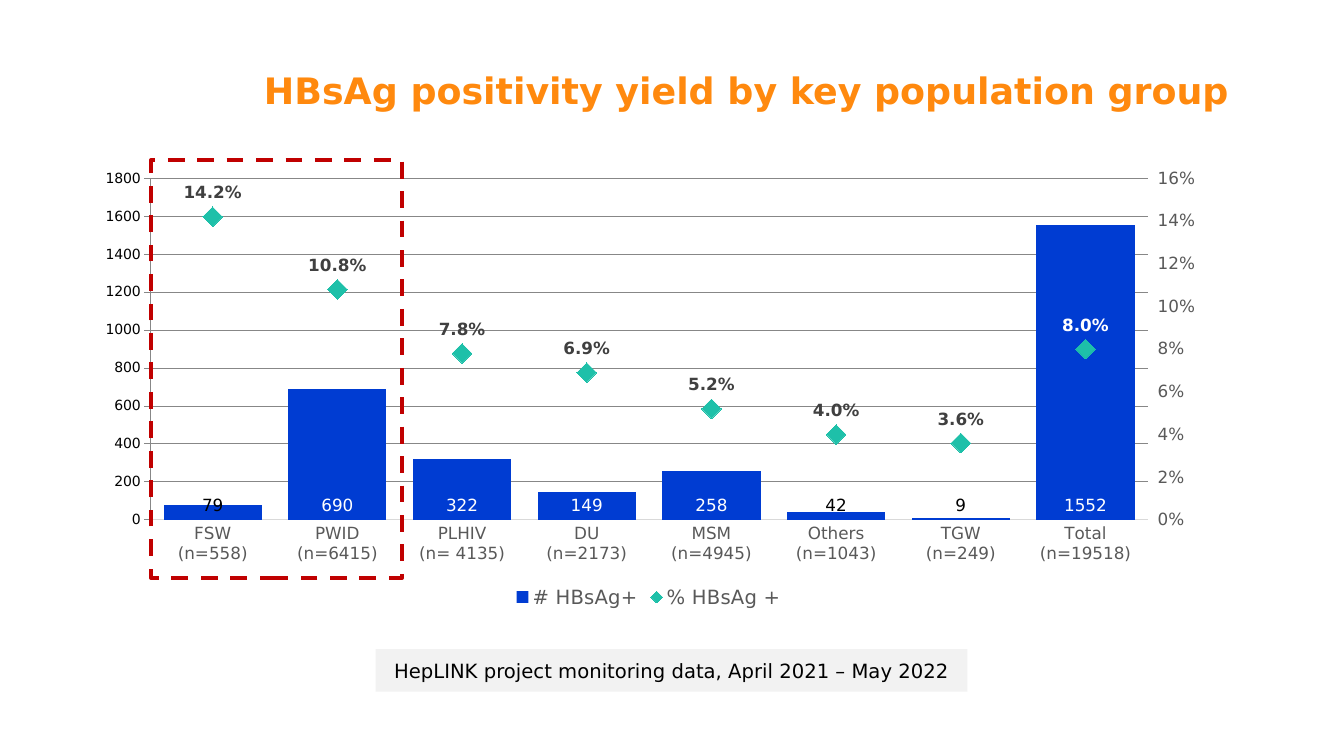
from pptx import Presentation
from pptx.chart.axis import ValueAxis
from pptx.chart.data import CategoryChartData
from pptx.dml.color import RGBColor
from pptx.enum.chart import (XL_CHART_TYPE, XL_LABEL_POSITION, XL_LEGEND_POSITION,
                             XL_MARKER_STYLE, XL_TICK_MARK)
from pptx.enum.dml import MSO_LINE
from pptx.enum.shapes import MSO_SHAPE
from pptx.enum.text import MSO_ANCHOR, PP_ALIGN
from pptx.oxml import parse_xml
from pptx.oxml.ns import qn
from pptx.util import Cm, Pt

COLUMNS = XL_CHART_TYPE.COLUMN_CLUSTERED
INSIDE_BASE, ABOVE = XL_LABEL_POSITION.INSIDE_BASE, XL_LABEL_POSITION.ABOVE
LEGEND_BOTTOM = XL_LEGEND_POSITION.BOTTOM
DIAMOND = XL_MARKER_STYLE.DIAMOND
NO_TICK, TICK_OUT = XL_TICK_MARK.NONE, XL_TICK_MARK.OUTSIDE
DASH = MSO_LINE.DASH
RECTANGLE = MSO_SHAPE.RECTANGLE
MIDDLE = MSO_ANCHOR.MIDDLE
CENTER = PP_ALIGN.CENTER

CHART_NS = 'xmlns:c="http://schemas.openxmlformats.org/drawingml/2006/chart"'
LAYOUT_XML = f"""<c:layout {CHART_NS}><c:manualLayout>
<c:layoutTarget val="inner"/><c:xMode val="edge"/><c:yMode val="edge"/>
<c:x val="0.063"/><c:y val="0.04"/><c:w val="0.875"/><c:h val="0.755"/>
</c:manualLayout></c:layout>"""
LINE_XML = f"""<c:lineChart {CHART_NS}><c:grouping val="standard"/><c:varyColors val="0"/>
<c:marker val="1"/><c:axId val="5001"/><c:axId val="5002"/></c:lineChart>"""
HIDDEN_AXIS_XML = f"""<c:catAx {CHART_NS}><c:axId val="5001"/>
<c:scaling><c:orientation val="minMax"/></c:scaling><c:delete val="1"/>
<c:axPos val="b"/><c:crossAx val="5002"/><c:crosses val="autoZero"/></c:catAx>"""
RIGHT_AXIS_XML = f"""<c:valAx {CHART_NS}><c:axId val="5002"/>
<c:scaling><c:orientation val="minMax"/></c:scaling><c:delete val="0"/>
<c:axPos val="r"/><c:tickLblPos val="nextTo"/>
<c:crossAx val="5001"/><c:crosses val="max"/></c:valAx>"""

GROUPS = [("FSW", "(n=558)", 79, 0.142), ("PWID", "(n=6415)", 690, 0.108),
          ("PLHIV", "(n= 4135)", 322, 0.078), ("DU", "(n=2173)", 149, 0.069),
          ("MSM", "(n=4945)", 258, 0.052), ("Others", "(n=1043)", 42, 0.04),
          ("TGW", "(n=249)", 9, 0.036), ("Total", "(n=19518)", 1552, 0.08)]
TALL_BARS = [1, 2, 3, 4, 7]
TOTAL = [7]


def rgb(hex_color):
    return RGBColor.from_string(hex_color)


class SlideBuilder:
    FONT = "DejaVu Sans"
    ORANGE, BLUE, TEAL, RED = "FF890E", "003CD2", "1EC0A9", "C00000"
    BLACK, DARK, GREY, RULE, PALE, WHITE = ("000000", "404040", "595959", "D9D9D9",
                                            "F2F2F2", "FFFFFF")

    def __init__(self, slide):
        self.slide = slide

    def style(self, font, size, color, bold=False):
        font.name, font.size, font.bold = self.FONT, Pt(size), bold
        font.color.rgb = rgb(color)

    def title(self, text, *box):
        frame = self.slide.shapes.add_textbox(*map(Cm, box)).text_frame
        frame.word_wrap = True
        frame.vertical_anchor = MIDDLE
        frame.margin_left = frame.margin_right = frame.margin_top = frame.margin_bottom = 0
        paragraph = frame.paragraphs[0]
        paragraph.text = text
        paragraph.line_spacing = 0.9
        self.style(paragraph.font, 26, self.ORANGE, True)

    def rectangle(self, *box):
        shape = self.slide.shapes.add_shape(RECTANGLE, *map(Cm, box))
        shape.shadow.inherit = False
        return shape

    def source_note(self, text, *box):
        note = self.rectangle(*box)
        note.fill.solid()
        note.fill.fore_color.rgb = rgb(self.PALE)
        note.line.fill.background()
        note.text_frame.word_wrap = True
        note.text_frame.vertical_anchor = MIDDLE
        paragraph = note.text_frame.paragraphs[0]
        paragraph.text = text
        paragraph.alignment = CENTER
        self.style(paragraph.font, 14, self.BLACK)

    def highlight(self, *box):
        frame = self.rectangle(*box)
        frame.fill.background()
        frame.line.color.rgb = rgb(self.RED)
        frame.line.width = Pt(3)
        frame.line.dash_style = DASH

    def value_axis(self, axis, top, step, number_format, tick):
        axis.minimum_scale, axis.maximum_scale, axis.major_unit = 0, top, step
        axis.major_tick_mark, axis.minor_tick_mark = tick, NO_TICK
        axis.tick_labels.number_format = number_format
        axis.tick_labels.number_format_is_linked = False
        axis.format.line.fill.background()
        self.style(axis.tick_labels.font, 12, self.GREY)

    def value_labels(self, series, position, number_format, color, bold, white_points):
        labels = series.data_labels
        labels.show_value = True
        labels.position = position
        labels.number_format = number_format
        labels.number_format_is_linked = False
        self.style(labels.font, 12, color, bold)
        for index in white_points:
            label = series.points[index].data_label
            self.style(label.font, 12, self.WHITE, bold)
            label.position = position

    def move_to_right_axis(self, chart):
        """Turn the last column series into a line with its own axis on the right."""
        plot_area = chart.element.find(".//" + qn("c:plotArea"))
        for layout in plot_area.findall(qn("c:layout")):
            plot_area.remove(layout)
        plot_area.insert(0, parse_xml(LAYOUT_XML))
        columns = plot_area.find(qn("c:barChart"))
        rate = columns.findall(qn("c:ser"))[-1]
        for column_setting in rate.findall(qn("c:invertIfNegative")):
            rate.remove(column_setting)
        line = parse_xml(LINE_XML)
        line.insert(2, rate)
        columns.addnext(line)
        right_axis = parse_xml(RIGHT_AXIS_XML)
        left_axis = plot_area.find(qn("c:valAx"))
        left_axis.addnext(right_axis)
        right_axis.addnext(parse_xml(HIDDEN_AXIS_XML))
        return ValueAxis(right_axis)

    def yield_chart(self, groups, *box):
        data = CategoryChartData()
        data.categories = [f"{name}\n{size}" for name, size, _, _ in groups]
        data.add_series("# HBsAg+", [group[2] for group in groups], "General")
        data.add_series("% HBsAg +", [group[3] for group in groups], "0.0%")
        chart = self.slide.shapes.add_chart(COLUMNS, *map(Cm, box), data).chart
        self.style(chart.font, 10, self.BLACK)
        chart.has_title = False
        chart.has_legend = True
        chart.legend.position = LEGEND_BOTTOM
        chart.legend.include_in_layout = False
        self.style(chart.legend.font, 14, self.GREY)

        right_axis = self.move_to_right_axis(chart)
        self.value_axis(chart.value_axis, 1800, 200, "General", NO_TICK)
        self.value_axis(right_axis, 0.16, 0.02, "0%", TICK_OUT)
        category_axis = chart.category_axis
        category_axis.major_tick_mark = category_axis.minor_tick_mark = NO_TICK
        self.style(category_axis.tick_labels.font, 12, self.GREY)
        for rule in (category_axis.format.line, chart.value_axis.major_gridlines.format.line):
            rule.color.rgb = rgb(self.RULE)
            rule.width = Pt(0.75)

        columns, line = chart.plots
        columns.gap_width = 27
        columns.vary_by_categories = False
        count, rate = columns.series[0], line.series[0]
        count.format.fill.solid()
        count.format.fill.fore_color.rgb = rgb(self.BLUE)
        self.value_labels(count, INSIDE_BASE, "General", self.BLACK, False, TALL_BARS)

        rate.smooth = False
        rate.format.line.fill.background()
        rate.marker.style, rate.marker.size = DIAMOND, 14
        rate.marker.format.fill.solid()
        rate.marker.format.fill.fore_color.rgb = rgb(self.TEAL)
        rate.marker.format.line.fill.background()
        self.value_labels(rate, ABOVE, "0.0%", self.DARK, True, TOTAL)


def main():
    presentation = Presentation()
    presentation.slide_width, presentation.slide_height = Cm(33.87), Cm(19.05)
    builder = SlideBuilder(presentation.slides.add_slide(presentation.slide_layouts[6]))
    builder.title("HBsAg positivity yield by key population group", 6.65, 0.64, 26.8, 3.4)
    builder.source_note("HepLINK project monitoring data, April 2021 – May 2022",
                        9.47, 16.36, 14.91, 1.07)
    builder.yield_chart(GROUPS, 1.98, 4.04, 28.73, 11.4)
    builder.highlight(3.81, 4.04, 6.32, 10.52)
    presentation.save("out.pptx")


if __name__ == "__main__":
    main()
